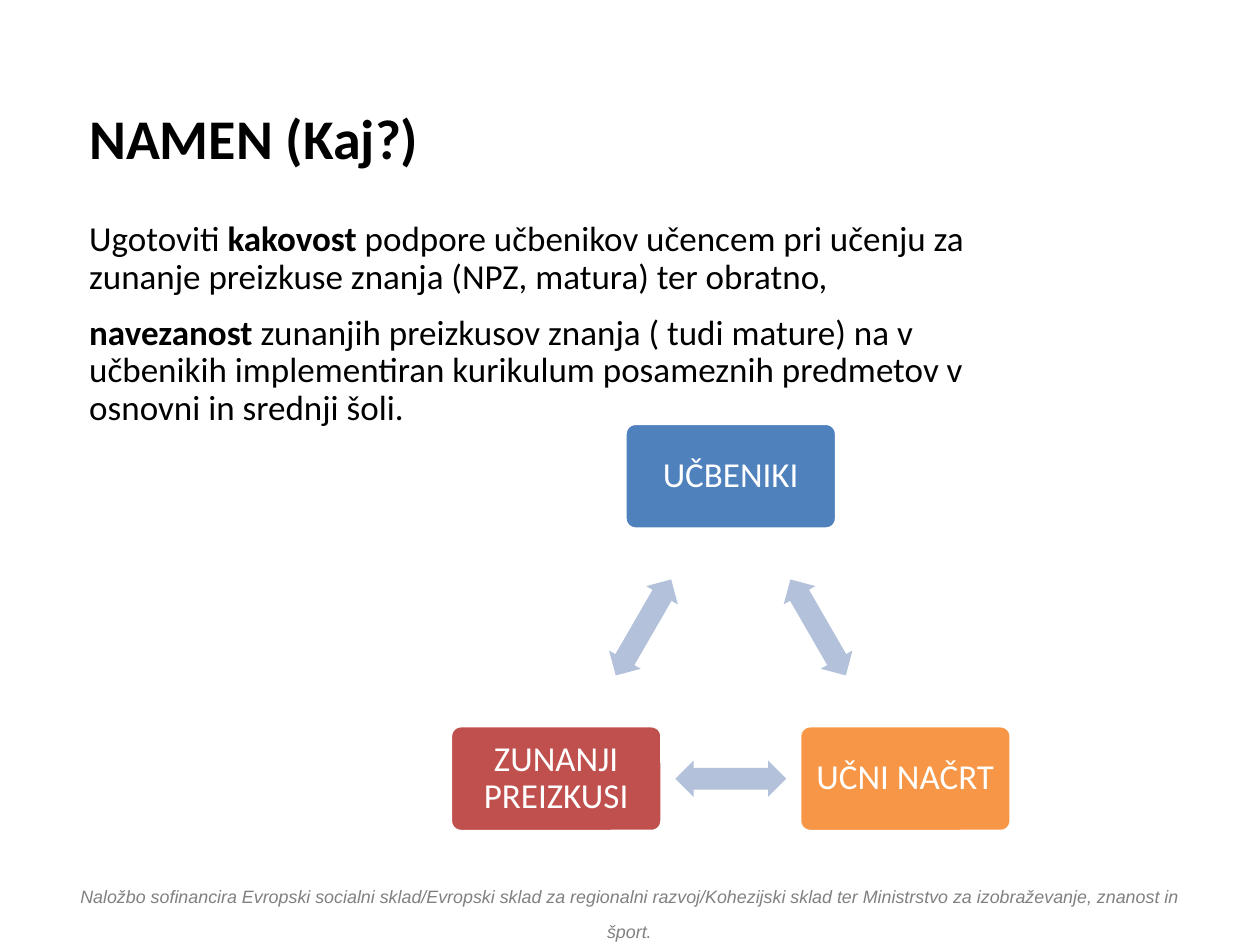
from math import cos, radians, sin

from lxml.etree import SubElement
from pptx import Presentation
from pptx.dml.color import RGBColor
from pptx.enum.shapes import MSO_SHAPE
from pptx.enum.text import MSO_ANCHOR, PP_ALIGN
from pptx.util import Inches, Pt

TITLE = [[("NAMEN (Kaj?)", True)]]
PURPOSE = [
    [("Ugotoviti ", False), ("kakovost", True),
     (" podpore učbenikov učencem pri učenju za zunanje preizkuse znanja "
      "(NPZ, matura) ter obratno,", False)],
    [("navezanost ", True),
     ("zunanjih preizkusov znanja ( tudi mature) na v učbenikih implementiran "
      "kurikulum posameznih predmetov v osnovni in srednji šoli.", False)],
]
# Clockwise from the top of the cycle
NODES = [("UČBENIKI", "4F81BD"), ("UČNI NAČRT", "F79646"), ("ZUNANJI PREIZKUSI", "C0504D")]
FUNDING = [[("Naložbo sofinancira Evropski socialni sklad/Evropski sklad za regionalni "
             "razvoj/Kohezijski sklad ter Ministrstvo za izobraževanje, znanost in šport.", False)]]

ARROW_COLOR = "B3C1DB"
LEFT, COLUMN_WIDTH = 0.61, 7.76
CENTER_X, CENTER_Y, RADIUS = 5.8, 5.38, 1.6
NODE_SIZE = (1.68, 0.84)
ARROW_SIZE = (0.88, 0.29)


def rgb(color):
    return RGBColor.from_string(color)


def write(frame, paragraphs, size, color="000000", font="Calibri", spacing=0.9,
          align=PP_ALIGN.LEFT, anchor=MSO_ANCHOR.TOP, italic=False):
    """Fill a frame with paragraphs given as lists of (words, bold)."""
    frame.word_wrap = True
    frame.vertical_anchor = anchor
    for i, parts in enumerate(paragraphs):
        paragraph = frame.add_paragraph() if i else frame.paragraphs[0]
        paragraph.alignment = align
        paragraph.line_spacing = spacing
        paragraph.space_before = Pt(10 if i else 0)
        for words, bold in parts:
            run = paragraph.add_run()
            run.text = words
            run.font.name, run.font.size = font, Pt(size)
            run.font.bold, run.font.italic = bold, italic
            run.font.color.rgb = rgb(color)


def add_text(slide, left, top, width, height, paragraphs, size, **style):
    box = slide.shapes.add_textbox(*map(Inches, (left, top, width, height)))
    write(box.text_frame, paragraphs, size, **style)
    return box


def add_on_cycle(slide, preset, angle, radius, size, color, adjustments):
    """Centre a shape on the cycle, at degrees clockwise from the top."""
    width, height = size
    x = CENTER_X + radius * sin(radians(angle))
    y = CENTER_Y - radius * cos(radians(angle))
    shape = slide.shapes.add_shape(
        preset, *map(Inches, (x - width / 2, y - height / 2, width, height)))
    shape.shadow.inherit = False
    shape.fill.solid()
    shape.fill.fore_color.rgb = rgb(color)
    shape.line.fill.background()
    for i, value in enumerate(adjustments):
        shape.adjustments[i] = value
    return shape


def add_cycle(slide):
    step = 360 / len(NODES)
    for i, (label, color) in enumerate(NODES):
        node = add_on_cycle(slide, MSO_SHAPE.ROUNDED_RECTANGLE, i * step, RADIUS,
                            NODE_SIZE, color, [0.1])
        node.line.color.rgb = rgb("FFFFFF")
        node.line.width = Pt(2)
        frame = node.text_frame
        frame.margin_left = frame.margin_right = Inches(0.08)
        write(frame, [[(label, False)]], 20, color="FFFFFF",
              align=PP_ALIGN.CENTER, anchor=MSO_ANCHOR.MIDDLE)

        between = (i + 0.5) * step
        arrow = add_on_cycle(slide, MSO_SHAPE.LEFT_RIGHT_ARROW, between, RADIUS / 2,
                             ARROW_SIZE, ARROW_COLOR, [0.6, 0.5])
        arrow.rotation = between


def main():
    deck = Presentation()
    deck.slide_width, deck.slide_height = Inches(10), Inches(7.5)
    slide = deck.slides.add_slide(deck.slide_layouts[6])

    add_text(slide, LEFT, 0.53, COLUMN_WIDTH, 1.18, TITLE, 32, anchor=MSO_ANCHOR.MIDDLE)
    add_text(slide, LEFT, 1.71, COLUMN_WIDTH, 1.81, PURPOSE, 20)
    add_cycle(slide)
    funding = add_text(slide, 0.39, 6.5, 9.21, 0.79, FUNDING, 10.2, color="808080",
                       font="Arial", spacing=1.6, align=PP_ALIGN.CENTER, italic=True)
    funding.text_frame.margin_top = Inches(0.43)
    funding.text_frame.margin_bottom = 0

    deck.save("out.pptx")


if __name__ == "__main__":
    main()
